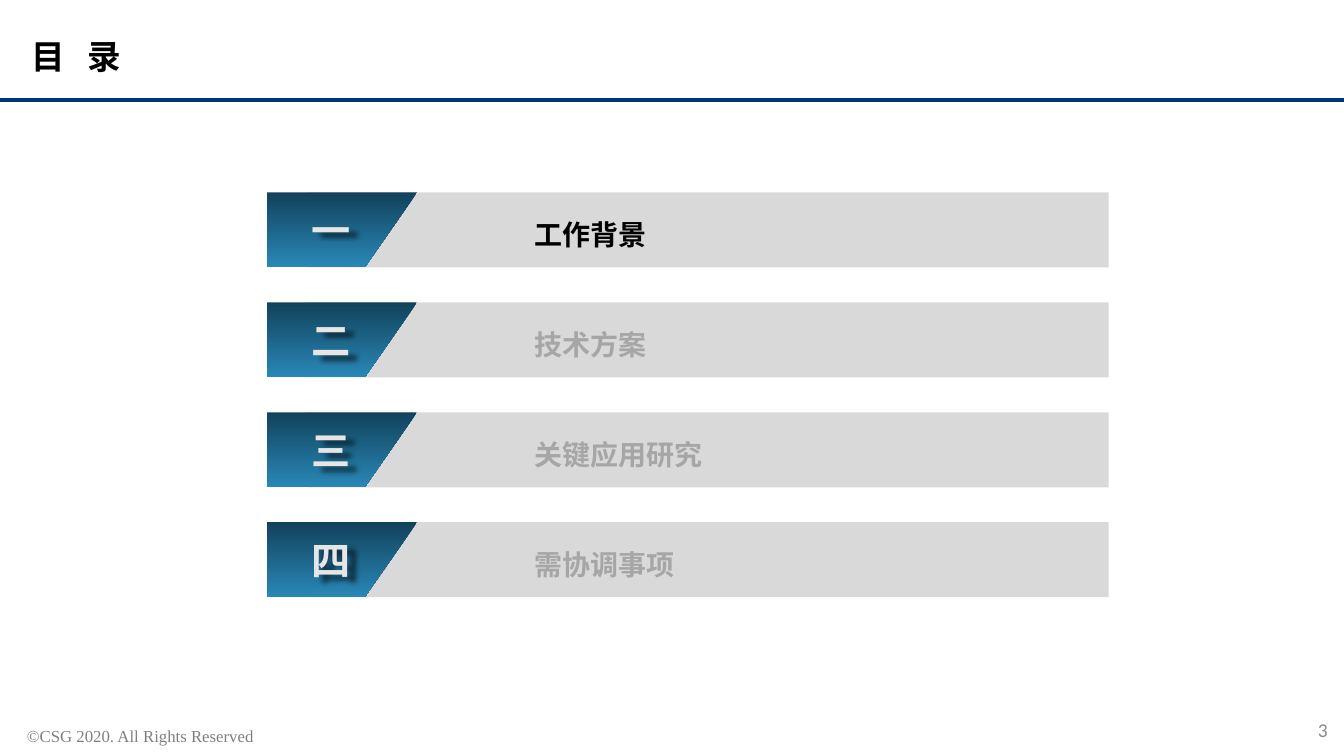
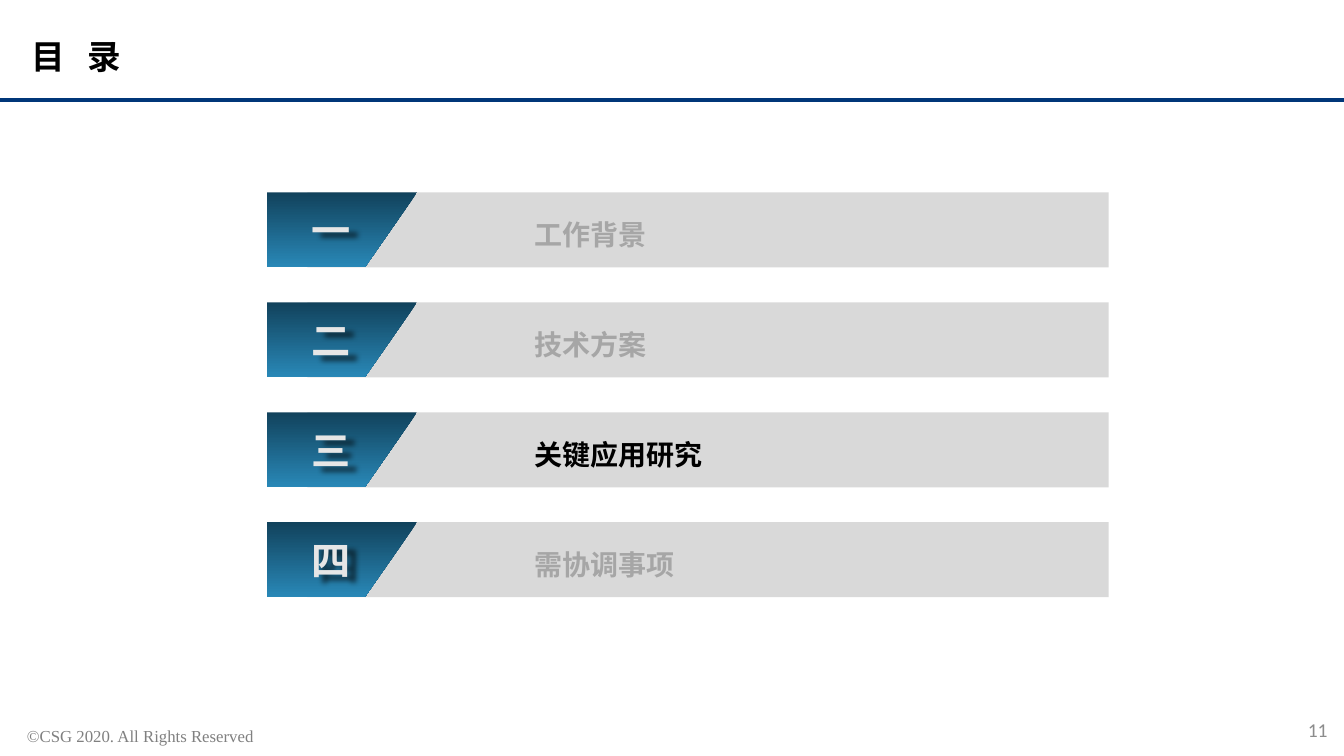
from dataclasses import dataclass
from typing import Optional

import pptx
import pptx.dml.color
import pptx.enum.shapes
import pptx.enum.text
import pptx.util
from lxml import etree

Cm = pptx.util.Cm
Pt = pptx.util.Pt
RGBColor = pptx.dml.color.RGBColor
Align = pptx.enum.text.PP_ALIGN
Anchor = pptx.enum.text.MSO_ANCHOR

WHITE = RGBColor(0xFF, 0xFF, 0xFF)
BLACK = RGBColor(0x00, 0x00, 0x00)
NAVY = RGBColor(0x00, 0x36, 0x79)
TAB_DARK = RGBColor(0x11, 0x42, 0x5C)
TAB_LIGHT = RGBColor(0x29, 0x88, 0xB7)
BAR_GREY = RGBColor(0xD9, 0xD9, 0xD9)
NUMERAL_GREY = RGBColor(0xE6, 0xE6, 0xE6)
MUTED_GREY = RGBColor(0xA6, 0xA6, 0xA6)
FOOTER_GREY = RGBColor(0x80, 0x80, 0x80)
PAGE_GREY = RGBColor(0x8C, 0x8C, 0x8C)

CJK_FONT = "Noto Sans CJK SC"
DRAWING_NS = "http://schemas.openxmlformats.org/drawingml/2006/main"

SLIDE_WIDTH, SLIDE_HEIGHT = Cm(33.87), Cm(19.05)
FIRST_ROW_TOP, ROW_PITCH, ROW_HEIGHT = 4.85, 2.77, 1.89
TAB_LEFT, TAB_TOP_WIDTH, TAB_BOTTOM_WIDTH = 6.73, 3.78, 2.46


@dataclass(frozen=True)
class Chapter:
    numeral: str
    heading: str


@dataclass(frozen=True)
class Agenda:
    page: int
    current: str


CHAPTERS = [
    Chapter("一", "工作背景"),
    Chapter("二", "技术方案"),
    Chapter("三", "关键应用研究"),
    Chapter("四", "需协调事项"),
]
AGENDAS = [Agenda(3, "一"), Agenda(11, "三")]


def write(frame, text: str, *, size: float, color: RGBColor, font: str = CJK_FONT,
          bold: bool = False, align=Align.LEFT, anchor=Anchor.TOP,
          line_spacing: Optional[float] = None, tracking: float = 0,
          inset: Optional[float] = None) -> None:
    frame.word_wrap = True
    frame.auto_size = pptx.enum.text.MSO_AUTO_SIZE.SHAPE_TO_FIT_TEXT
    frame.vertical_anchor = anchor
    if inset is not None:
        frame.margin_left = frame.margin_right = Cm(inset)
        frame.margin_top = frame.margin_bottom = Cm(inset)
    paragraph = frame.paragraphs[0]
    paragraph.alignment = align
    paragraph.line_spacing = line_spacing
    run = paragraph.add_run()
    run.text = text
    run.font.size = Pt(size)
    run.font.bold = bold
    run.font.color.rgb = color
    run.font.name = font
    properties = run._r.get_or_add_rPr()
    etree.SubElement(properties, f"{{{DRAWING_NS}}}ea", typeface=font)
    if tracking:
        properties.set("spc", str(round(tracking * 100)))


def add_label(shapes, text: str, left: float, top: float, width: float, height: float,
              **text_format):
    label = shapes.add_textbox(Cm(left), Cm(top), Cm(width), Cm(height))
    write(label.text_frame, text, **text_format)
    return label


def add_block(shapes, left: float, top: float, width: float, height: float,
              color: RGBColor):
    block = shapes.add_shape(pptx.enum.shapes.MSO_SHAPE.RECTANGLE,
                             Cm(left), Cm(top), Cm(width), Cm(height))
    block.shadow.inherit = False
    block.fill.solid()
    block.fill.fore_color.rgb = color
    block.line.fill.background()
    return block


def add_tab(shapes, top: float) -> None:
    bottom = top + ROW_HEIGHT
    outline = shapes.build_freeform(Cm(TAB_LEFT), Cm(top))
    outline.add_line_segments([
        (Cm(TAB_LEFT), Cm(bottom)),
        (Cm(TAB_LEFT + TAB_BOTTOM_WIDTH), Cm(bottom)),
        (Cm(TAB_LEFT + TAB_TOP_WIDTH), Cm(top)),
    ])
    tab = outline.convert_to_shape()
    tab.shadow.inherit = False
    tab.line.fill.background()
    tab.fill.gradient()
    tab.fill.gradient_angle = 270
    for stop, color in zip(tab.fill.gradient_stops, (TAB_DARK, TAB_LIGHT)):
        stop.color.rgb = color


def cast_shadow(label) -> None:
    label._element.spPr.append(etree.fromstring(
        f'<a:effectLst xmlns:a="{DRAWING_NS}">'
        '<a:outerShdw blurRad="50800" dist="85000" dir="1800000" algn="tl" rotWithShape="0">'
        '<a:srgbClr val="000000"><a:alpha val="60000"/></a:srgbClr>'
        '</a:outerShdw></a:effectLst>'))


def add_chapter(slide, chapter: Chapter, top: float, is_current: bool) -> None:
    row = slide.shapes.add_group_shape().shapes
    add_block(row, 7.75, top, 20.19, ROW_HEIGHT, BAR_GREY)
    add_tab(row, top)
    numeral = add_label(row, chapter.numeral, 7.37, top + 0.36, 1.95, 1.32, size=28,
                        color=NUMERAL_GREY, bold=True, align=Align.CENTER,
                        line_spacing=0.9)
    cast_shadow(numeral)
    add_label(row, chapter.heading, 13.21, top + 0.5, 13.2, 1.11, size=20, bold=True,
              color=BLACK if is_current else MUTED_GREY)


def add_frame(slide, page: int) -> None:
    footer = add_block(slide.shapes, 0.43, 18.16, 13, 0.77, WHITE)
    write(footer.text_frame, "©CSG 2020. All Rights Reserved", size=12,
          color=FOOTER_GREY, font="Times New Roman")
    rule = slide.shapes.add_connector(pptx.enum.shapes.MSO_CONNECTOR.STRAIGHT,
                                      0, Cm(2.52), SLIDE_WIDTH, Cm(2.52))
    rule.line.color.rgb = NAVY
    rule.line.width = Pt(2.25)
    etree.SubElement(rule._element.spPr, f"{{{DRAWING_NS}}}effectLst")
    title = slide.shapes.title
    title.left, title.top, title.width, title.height = Cm(0.79), Cm(1.02), Cm(13.2), Cm(0.92)
    write(title.text_frame, "目 录", size=24, color=BLACK, bold=True,
          line_spacing=0.9, tracking=5.5, inset=0)
    add_label(slide.shapes, str(page), 26.09, 17.88, 7.62, 1.01, size=14,
              color=PAGE_GREY, font="Calibri", align=Align.RIGHT, anchor=Anchor.MIDDLE)


def add_agenda(deck, agenda: Agenda) -> None:
    slide = deck.slides.add_slide(deck.slide_layouts.get_by_name("Title Only"))
    add_frame(slide, agenda.page)
    for index, chapter in enumerate(CHAPTERS):
        add_chapter(slide, chapter, FIRST_ROW_TOP + index * ROW_PITCH,
                    chapter.numeral == agenda.current)


def main() -> None:
    deck = pptx.Presentation()
    deck.slide_width, deck.slide_height = SLIDE_WIDTH, SLIDE_HEIGHT
    for agenda in AGENDAS:
        add_agenda(deck, agenda)
    deck.save("out.pptx")


if __name__ == "__main__":
    main()
